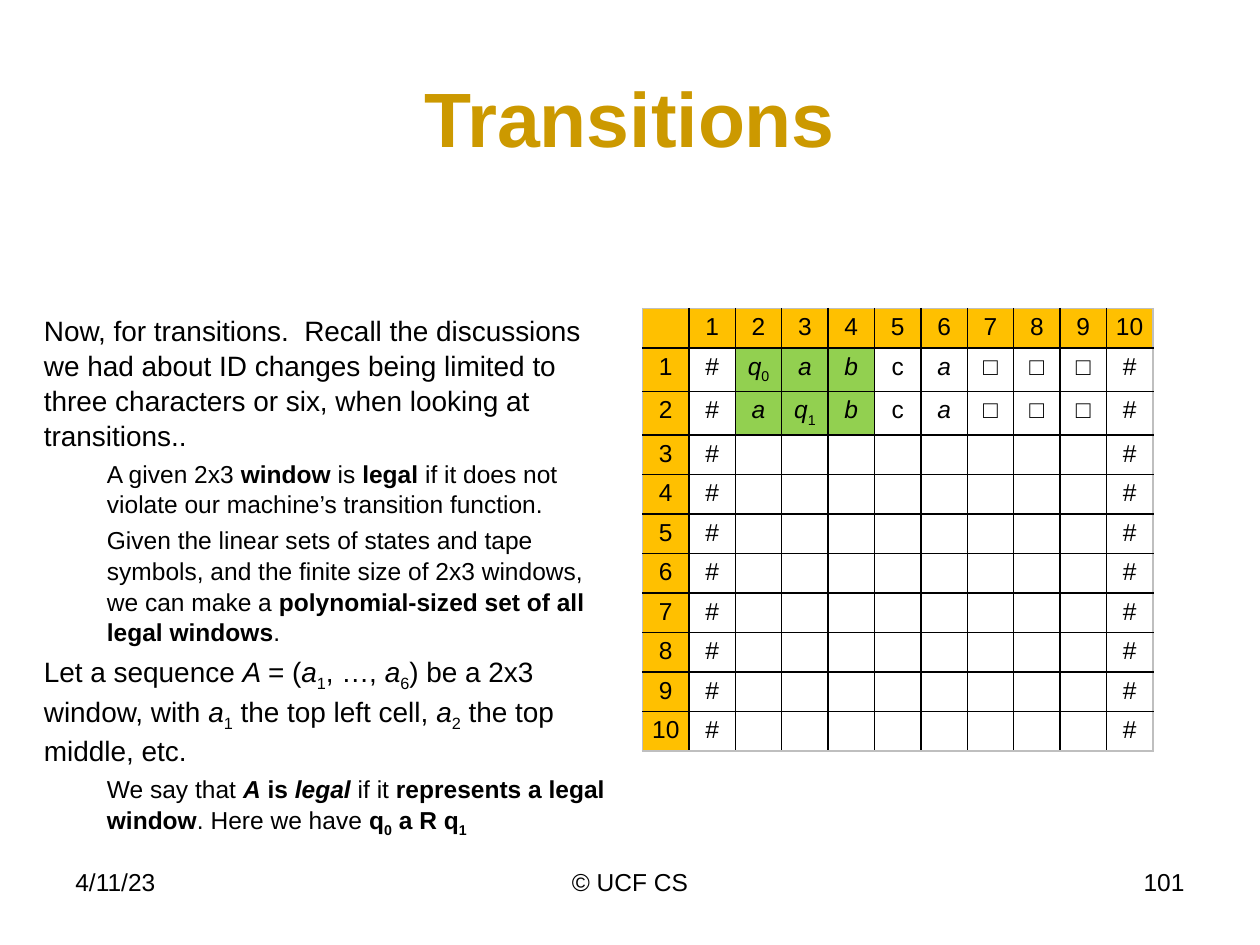
from pptx import Presentation
from pptx.dml.color import RGBColor
from pptx.enum.text import MSO_ANCHOR, PP_ALIGN
from pptx.oxml import parse_xml
from pptx.oxml.ns import nsdecls
from pptx.util import Inches, Pt

FONT = "Arial"
COLORS = {
    "text": "000000",
    "title": "CC9900",
    "header": "FFC000",
    "window": "92D050",
    "grid": "000000",
    "edge": "BFBFBF",
}
SIZE = 11  # table rows and columns, headers included
BLANK = "□"

# Runs are (text, style): b bold, i italic, s subscript
BODY = [
    (0, [("Now, for transitions.  Recall the discussions we had about ID changes being "
          "limited to three characters or six, when looking at transitions..", "")]),
    (1, [("A given 2x3 ", ""), ("window", "b"), (" is ", ""), ("legal", "b"),
         (" if it does not violate our machine’s transition function.", "")]),
    (1, [("Given the linear sets of states and tape symbols, and the finite size of "
          "2x3 windows, we can make a ", ""),
         ("polynomial-sized set of all legal windows", "b"), (".", "")]),
    (0, [("Let a sequence ", ""), ("A ", "i"), ("= (", ""), ("a", "i"), ("1", "s"),
         (", …, ", ""), ("a", "i"), ("6", "s"), (") be a 2x3 window, with ", ""),
         ("a", "i"), ("1", "s"), (" the top left cell, ", ""), ("a", "i"), ("2", "s"),
         (" the top middle, etc.", "")]),
    (1, [("We say that ", ""), ("A", "bi"), (" is ", "b"), ("legal ", "bi"),
         ("if it ", ""), ("represents a legal window", "b"), (". Here we have ", ""),
         ("q", "b"), ("0", "bs"), (" a R q", "b"), ("1", "bs")]),
]
TAPE_END = [[("c", "")], [("a", "i")]] + [[(BLANK, "")]] * 3
CONFIGS = {
    1: [[("q", "i"), ("0", "s")], [("a", "i")], [("b", "i")]] + TAPE_END,
    2: [[("a", "i")], [("q", "i"), ("1", "s")], [("b", "i")]] + TAPE_END,
}


def rgb(name):
    return RGBColor.from_string(COLORS[name])


def write(p, runs, size=14, color="text", align=PP_ALIGN.LEFT):
    """Fill a paragraph with styled runs."""
    p.alignment = align
    p.font.size = Pt(size)
    for text, style in runs:
        r = p.add_run()
        r.text = text
        r.font.name, r.font.size = FONT, Pt(size)
        r.font.color.rgb = rgb(color)
        r.font.bold, r.font.italic = "b" in style, "i" in style
        if "s" in style:
            r.font._element.set("baseline", "-25000")


def add_box(slide, left, top, width, height, anchor=MSO_ANCHOR.TOP):
    sp = slide.shapes.add_textbox(Inches(left), Inches(top), Inches(width), Inches(height))
    tf = sp.text_frame
    tf.word_wrap = True
    tf.vertical_anchor = anchor
    return tf


def add_title(slide, left, top, width, height):
    tf = add_box(slide, left, top, width, height, MSO_ANCHOR.MIDDLE)
    write(tf.paragraphs[0], [("Transitions", "b")], size=44, color="title",
          align=PP_ALIGN.CENTER)


def add_body(slide, left, top, width, height):
    tf = add_box(slide, left, top, width, height)
    for n, (level, runs) in enumerate(BODY):
        p = tf.add_paragraph() if n else tf.paragraphs[0]
        p.line_spacing = 1.04
        if n:
            p.space_before = Pt(3.2 if level else 3.7)
        if level:
            p.level = level
            pPr = p._p.get_or_add_pPr()
            pPr.set("marL", str(Inches(0.5)))
            pPr.set("indent", "0")
        write(p, runs, size=14 if level else 16)


def cell_runs(row, col):
    if row == 0 or col == 0:
        return [(str(row + col), "")] if row + col else []
    if col in (1, SIZE - 1):
        return [("#", "")]
    return CONFIGS[row][col - 2] if row in CONFIGS else []


def set_borders(cell, row, col):
    """Dark lines inside the grid, light ones around it."""
    sides = {"lnL": col == 0, "lnR": col == SIZE - 1,
             "lnT": row == 0, "lnB": row == SIZE - 1}
    tcPr = cell._tc.get_or_add_tcPr()
    for n, (tag, outer) in enumerate(sides.items()):
        color = COLORS["edge" if outer else "grid"]
        tcPr.insert(n, parse_xml(
            f'<a:{tag} {nsdecls("a")} w="{Pt(1)}"><a:solidFill>'
            f'<a:srgbClr val="{color}"/></a:solidFill></a:{tag}>'))


def add_tableau(slide, left, top, width, height):
    frame = slide.shapes.add_table(SIZE, SIZE, Inches(left), Inches(top),
                                   Inches(width), Inches(height))
    table = frame.table
    table.first_row = table.horz_banding = False
    for row in range(SIZE):
        table.rows[row].height = Inches(0.3)
        for col in range(SIZE):
            cell = table.cell(row, col)
            cell.margin_left = cell.margin_right = Inches(0.07)
            cell.margin_top = cell.margin_bottom = Inches(0.04)
            write(cell.text_frame.paragraphs[0], cell_runs(row, col),
                  align=PP_ALIGN.CENTER)
            # Header cells and the 2x3 window are coloured
            if row == 0 or col == 0:
                cell.fill.solid()
                cell.fill.fore_color.rgb = rgb("header")
            elif row in CONFIGS and 2 <= col <= 4:
                cell.fill.solid()
                cell.fill.fore_color.rgb = rgb("window")
            else:
                cell.fill.background()
            set_borders(cell, row, col)
            if not cell.text_frame.text:
                p = cell.text_frame.paragraphs[0]
                p._p.get_or_add_endParaRPr().set("sz", "1400")
    frame.height = Inches(height)


def add_footer(slide, left, top, width, height):
    parts = [
        ("4/11/23", 0, 2.33, PP_ALIGN.LEFT),
        ("© UCF CS", (width - 3.17) / 2, 3.17, PP_ALIGN.CENTER),
        ("101", width - 2.33, 2.33, PP_ALIGN.RIGHT),
    ]
    for text, dx, w, align in parts:
        tf = add_box(slide, left + dx, top, w, height)
        write(tf.paragraphs[0], [(text, "")], align=align)


def main():
    prs = Presentation()
    prs.slide_width, prs.slide_height = Inches(10), Inches(7.5)
    s = prs.slides.add_slide(prs.slide_layouts[6])
    add_title(s, 0.5, 0.3, 9, 1.25)
    add_body(s, 0.25, 2.43, 4.72, 3.67)
    add_tableau(s, 5.1, 2.45, 4.05, 3.39)
    add_footer(s, 0.5, 6.83, 9, 0.52)
    prs.save("out.pptx")


if __name__ == "__main__":
    main()
